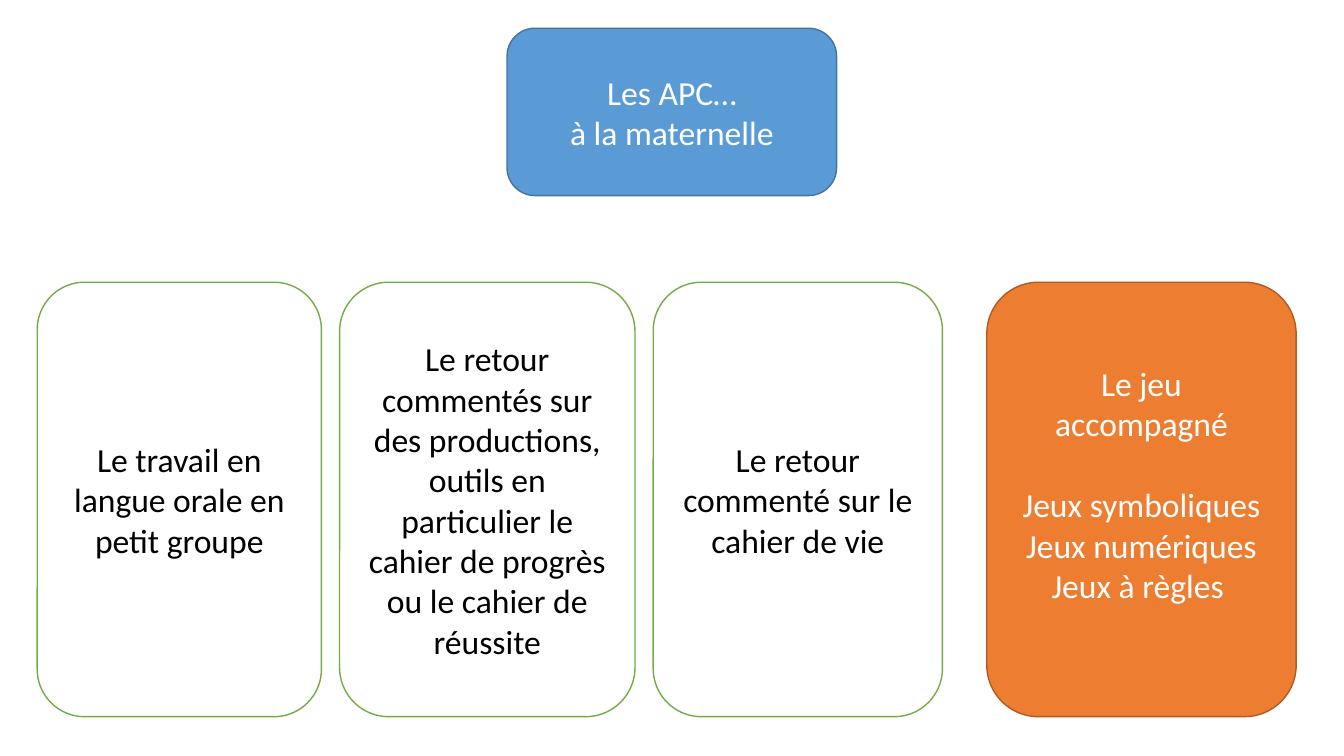
from dataclasses import dataclass

import pptx
import pptx.dml.color
import pptx.enum.shapes
import pptx.enum.text
import pptx.util

Pt = pptx.util.Pt

FONT, TEXT_SIZE = "Calibri", 24
BLACK, WHITE = "000000", "FFFFFF"
BLUE, DARK_BLUE = "5B9BD5", "43739E"
GREEN = "70AD47"
ORANGE, DARK_ORANGE = "ED7D31", "AF5C24"
INSET = 3.6
CARD_TOP, CARD_HEIGHT = 201.6, 310.3


@dataclass
class Line:
    text: str
    space_before: float = 0


@dataclass
class Box:
    left: float
    top: float
    width: float
    height: float
    fill: str
    outline: str


@dataclass
class Card:
    left: float
    width: float
    lines: list[Line]
    fill: str = WHITE
    outline: str = GREEN
    text_color: str = BLACK
    bottom_inset: float = INSET


HEADING_BOX = Box(362.2, 20.2, 235.4, 119.5, BLUE, DARK_BLUE)
HEADING_LINES = [Line("Les APC…"), Line("à la maternelle")]

CARDS = [
    Card(26.6, 203, [Line("Le travail en langue orale en petit groupe")]),
    Card(242.6, 211, [Line("Le retour commentés sur des productions, outils en "
                           "particulier le cahier de progrès ou le cahier de réussite")]),
    Card(466.6, 206.6, [Line("Le retour commenté sur le cahier de vie")]),
    Card(704.9, 221, [Line("Le jeu accompagné"),
                      Line("Jeux symboliques", space_before=29),
                      Line("Jeux numériques"),
                      Line("Jeux à règles ")],
         ORANGE, DARK_ORANGE, WHITE, bottom_inset=25.6),
]


def rgb(color: str) -> pptx.dml.color.RGBColor:
    return pptx.dml.color.RGBColor.from_string(color)


def add_box(page, box: Box):
    """Draw a rounded rectangle with a thin outline."""
    shape = page.shapes.add_shape(
        pptx.enum.shapes.MSO_SHAPE.ROUNDED_RECTANGLE,
        Pt(box.left), Pt(box.top), Pt(box.width), Pt(box.height))
    shape.shadow.inherit = False
    shape.fill.solid()
    shape.fill.fore_color.rgb = rgb(box.fill)
    shape.line.color.rgb = rgb(box.outline)
    shape.line.width = Pt(1)
    return shape


def write_lines(shape, lines: list[Line], color: str, bottom_inset: float = INSET) -> None:
    """Write centred paragraphs, one run each."""
    frame = shape.text_frame
    frame.word_wrap = True
    frame.auto_size = pptx.enum.text.MSO_AUTO_SIZE.NONE
    frame.vertical_anchor = pptx.enum.text.MSO_ANCHOR.MIDDLE
    frame.margin_bottom = Pt(bottom_inset)
    for index, line in enumerate(lines):
        para = frame.add_paragraph() if index else frame.paragraphs[0]
        para.alignment = pptx.enum.text.PP_ALIGN.CENTER
        para.space_before = Pt(line.space_before)
        span = para.add_run()
        span.text = line.text
        span.font.name = FONT
        span.font.size = Pt(TEXT_SIZE)
        span.font.color.rgb = rgb(color)


def add_heading(page) -> None:
    """Lay the slide title over its coloured box."""
    add_box(page, HEADING_BOX)
    title = page.shapes.title
    title.left, title.top = Pt(HEADING_BOX.left), Pt(HEADING_BOX.top)
    title.width, title.height = Pt(HEADING_BOX.width), Pt(HEADING_BOX.height)
    write_lines(title, HEADING_LINES, WHITE)
    # Bring the title in front of the box
    page.shapes.element.append(title.element)


def add_card(page, card: Card) -> None:
    box = Box(card.left, CARD_TOP, card.width, CARD_HEIGHT, card.fill, card.outline)
    write_lines(add_box(page, box), card.lines, card.text_color, card.bottom_inset)


def main() -> None:
    deck = pptx.Presentation()
    deck.slide_width, deck.slide_height = Pt(960), Pt(540)
    title_only = deck.slide_layouts[5]
    page = deck.slides.add_slide(title_only)

    # Heading
    add_heading(page)

    # Row of activities
    for card in CARDS:
        add_card(page, card)

    deck.save("out.pptx")


if __name__ == "__main__":
    main()
